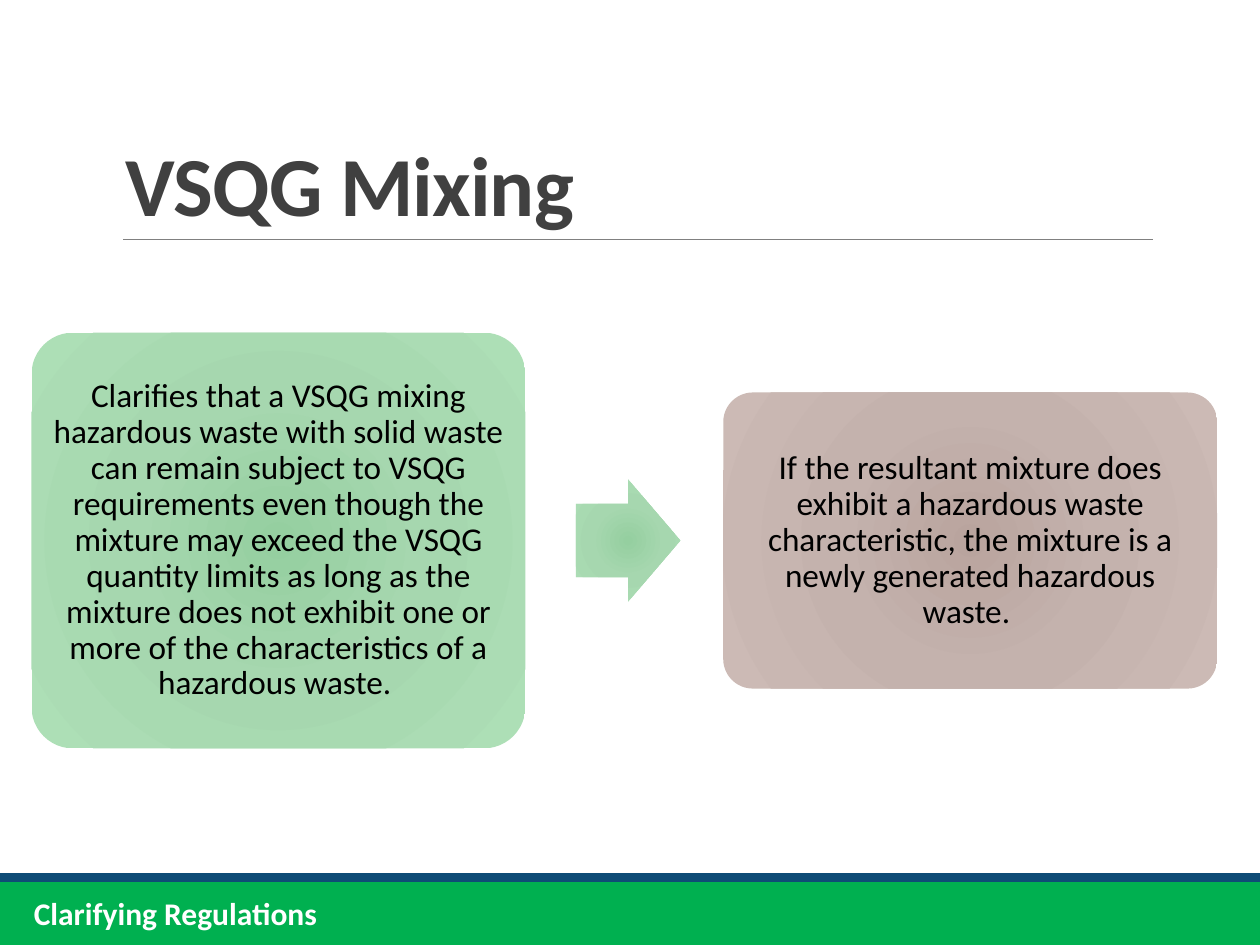
import pptx
import pptx.util
import pptx.dml.color
import pptx.enum.shapes
import pptx.enum.text
import pptx.oxml
import pptx.oxml.ns
from lxml import etree

Inches = pptx.util.Inches
Pt = pptx.util.Pt
RGBColor = pptx.dml.color.RGBColor
SHAPE = pptx.enum.shapes.MSO_SHAPE
ANCHOR = pptx.enum.text.MSO_ANCHOR
ALIGN = pptx.enum.text.PP_ALIGN

FONT = "Calibri"
BLACK = RGBColor(0x00, 0x00, 0x00)
WHITE = RGBColor(0xFF, 0xFF, 0xFF)
TITLE_GREY = RGBColor(0x40, 0x40, 0x40)
RULE_GREY = RGBColor(0x80, 0x80, 0x80)
FOOTER_GREEN = RGBColor(0x00, 0xB0, 0x50)
FOOTER_BLUE = RGBColor(0x0F, 0x4C, 0x76)
GREENS = [RGBColor(0x95, 0xCF, 0xA0), RGBColor(0xA6, 0xD7, 0xAF), RGBColor(0xAD, 0xDF, 0xB6)]
BROWNS = [RGBColor(0xB9, 0xA4, 0x9E), RGBColor(0xC4, 0xB2, 0xAD), RGBColor(0xCC, 0xBA, 0xB5)]
STOPS = [0, 45, 100]

CARD_WIDTH = 3.92
MIDDLE = 4.29  # common centre line of the cards and the arrow


def add_plain_shape(page, kind, left, top, width, height):
    shape = page.shapes.add_shape(kind, Inches(left), Inches(top), Inches(width), Inches(height))
    shape.shadow.inherit = False
    shape.line.fill.background()
    return shape


def add_bar(page, top, height, color):
    bar = add_plain_shape(page, SHAPE.RECTANGLE, 0, top, 10, height)
    bar.fill.solid()
    bar.fill.fore_color.rgb = color


def add_rule(page, left, right, top):
    rule = page.shapes.add_connector(
        pptx.enum.shapes.MSO_CONNECTOR.STRAIGHT,
        Inches(left), Inches(top), Inches(right), Inches(top))
    rule.line.color.rgb = RULE_GREY
    rule.line.width = Pt(0.5)
    etree.SubElement(rule._element.spPr, pptx.oxml.ns.qn("a:effectLst"))


def fill_radial(shape, colors):
    stops = "".join(
        f'<a:gs pos="{stop * 1000}"><a:srgbClr val="{color}"/></a:gs>'
        for stop, color in zip(STOPS, colors))
    gradient = pptx.oxml.parse_xml(
        f'<a:gradFill {pptx.oxml.ns.nsdecls("a")} rotWithShape="1"><a:gsLst>{stops}</a:gsLst>'
        '<a:path path="circle"><a:fillToRect l="100000" t="100000" r="100000" b="100000"/>'
        '</a:path></a:gradFill>')
    shape.fill.background()
    properties = shape._element.spPr
    properties.replace(properties.find(pptx.oxml.ns.qn("a:noFill")), gradient)


def write(frame, text, size, color, bold=False):
    para = frame.paragraphs[0]
    para.text = text
    para.font.name = FONT
    para.font.size = Pt(size)
    para.font.bold = bold
    para.font.color.rgb = color
    return para


def add_label(page, box, text, size, color, wrap):
    label = page.shapes.add_textbox(*map(Inches, box))
    label.text_frame.word_wrap = wrap
    para = write(label.text_frame, text, size, color, bold=True)
    return label.text_frame, para


def add_card(page, left, height, colors, text):
    card = add_plain_shape(page, SHAPE.ROUNDED_RECTANGLE,
                           left, MIDDLE - height / 2, CARD_WIDTH, height)
    card.adjustments[0] = 0.1
    fill_radial(card, colors)
    frame = card.text_frame
    frame.word_wrap = True
    frame.vertical_anchor = ANCHOR.MIDDLE
    frame.margin_left = frame.margin_right = Inches(0.08)
    frame.margin_top = frame.margin_bottom = Inches(0.08)
    para = write(frame, text, 19, BLACK)
    para.alignment = ALIGN.CENTER
    para.line_spacing = 0.9


def add_arrow(page, left, width, height, colors):
    arrow = add_plain_shape(page, SHAPE.RIGHT_ARROW, left, MIDDLE - height / 2, width, height)
    arrow.adjustments[0] = 0.6
    arrow.adjustments[1] = 0.5
    fill_radial(arrow, colors)


def main():
    deck = pptx.Presentation()
    deck.slide_width = Inches(10)
    deck.slide_height = Inches(7.5)
    page = deck.slides.add_slide(deck.slide_layouts[6])

    # Footer bars and title rule
    add_bar(page, 7, 0.5, FOOTER_GREEN)
    add_bar(page, 6.93, 0.07, FOOTER_BLUE)
    add_rule(page, 0.98, 9.15, 1.9)

    # Title
    frame, para = add_label(page, (0.9, 0.31, 8.25, 1.59), "VSQG Mixing", 48, TITLE_GREY, True)
    frame.vertical_anchor = ANCHOR.BOTTOM
    para.line_spacing = 0.85
    para.runs[0].font._element.set("spc", "-50")

    # Two-step flow
    add_card(page, 0.25, 3.3, GREENS,
             "Clarifies that a VSQG mixing hazardous waste with solid waste can remain subject to "
             "VSQG requirements even though the mixture may exceed the VSQG quantity limits as long "
             "as the mixture does not exhibit one or more of the characteristics of a hazardous "
             "waste. ")
    add_arrow(page, 4.57, 0.83, 0.97, GREENS)
    add_card(page, 5.74, 2.35, BROWNS,
             "If the resultant mixture does exhibit a hazardous waste characteristic, the mixture "
             "is a newly generated hazardous waste. ")

    # Footer text
    add_label(page, (0.17, 7.05, 2.47, 0.4), "Clarifying Regulations", 18, WHITE, False)

    deck.save("out.pptx")


if __name__ == "__main__":
    main()
